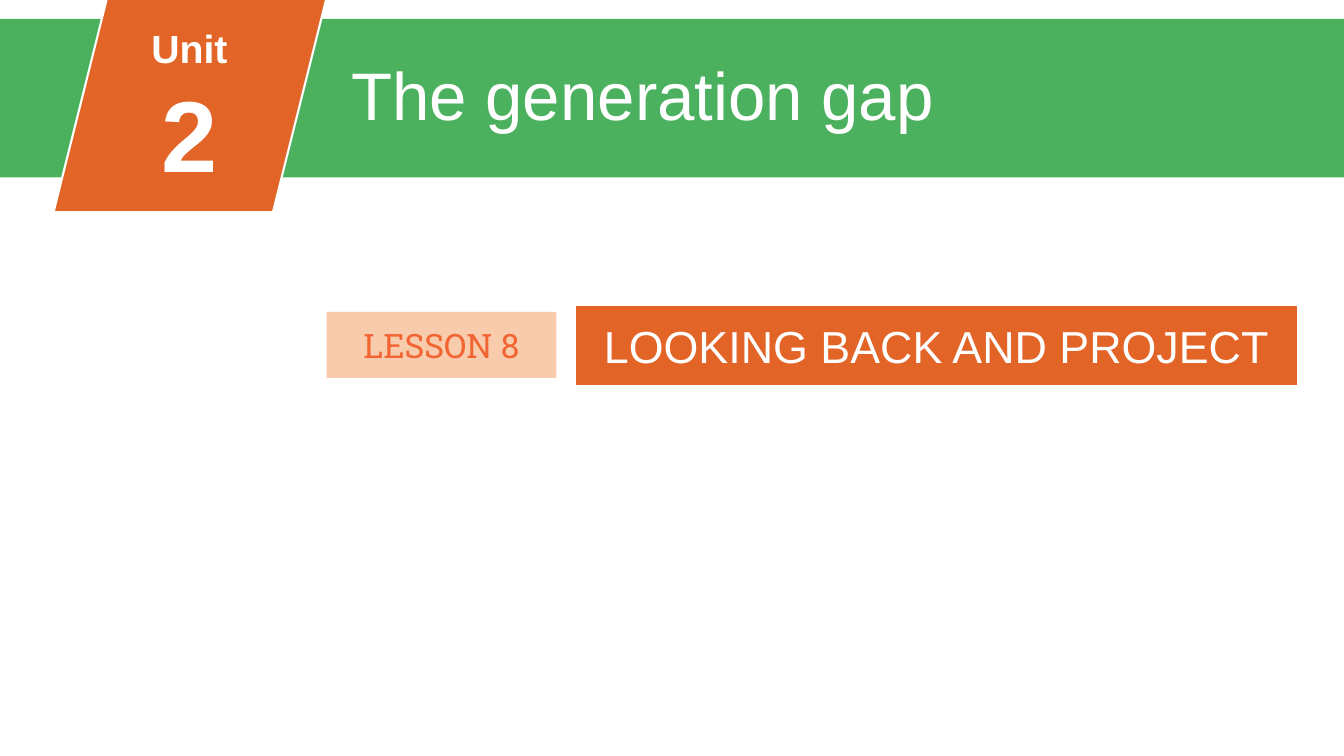
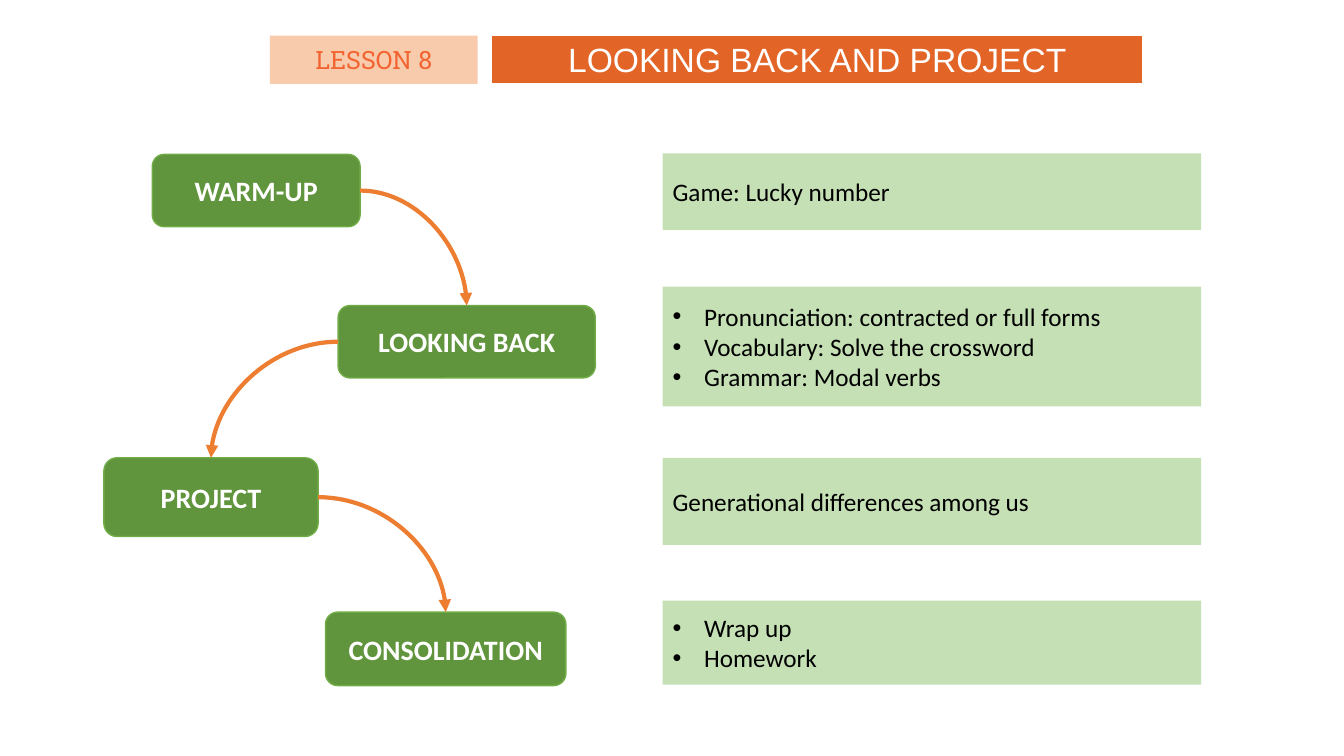
from dataclasses import dataclass
from typing import Optional

import lxml.etree
import pptx
import pptx.dml.color
import pptx.enum.shapes
import pptx.enum.text
import pptx.oxml.ns
import pptx.util

PX = 9525  # EMU in one px, 96 px to the inch

ORANGE, PEACH, CORAL = "E36427", "F8CBAD", "F26532"
BAND_GREEN, STEP_GREEN, STEP_EDGE, PALE_GREEN = "4CB15F", "61953D", "70AD47", "C5E0B4"
ARROW_ORANGE, WHITE, BLACK = "ED7D31", "FFFFFF", "000000"

LESSON = "LESSON 8"
LESSON_TITLE = "LOOKING BACK AND PROJECT"
DETAIL_LEFT, DETAIL_WIDTH = 631, 513
BULLET_INDENT = 30
TITLE_ONLY, COMPARISON = 5, 4

Shapes = pptx.enum.shapes.MSO_SHAPE
Align = pptx.enum.text.PP_ALIGN
Anchor = pptx.enum.text.MSO_ANCHOR
qn = pptx.oxml.ns.qn


@dataclass(frozen=True)
class Box:
    left: int
    top: int
    width: int
    height: int


@dataclass(frozen=True)
class TextStyle:
    font: str
    size: int
    color: str
    bold: bool = False
    align: Align = Align.CENTER
    anchor: Anchor = Anchor.MIDDLE
    bullets: bool = False


@dataclass(frozen=True)
class Step:
    name: str
    box: Box
    detail_top: int
    detail_height: int
    details: tuple[str, ...]


STEPS = (
    Step("WARM-UP", Box(145, 147, 198, 69), 146, 73, ("Game: Lucky number",)),
    Step("LOOKING BACK", Box(322, 291, 245, 69), 273, 114,
         ("Pronunciation: contracted or full forms",
          "Vocabulary: Solve the crossword",
          "Grammar: Modal verbs")),
    Step("PROJECT", Box(99, 436, 204, 75), 436, 83,
         ("Generational differences among us",)),
    Step("CONSOLIDATION", Box(310, 583, 229, 70), 572, 80,
         ("Wrap up", "Homework")),
)


def px(length: int) -> pptx.util.Emu:
    return pptx.util.Emu(length * PX)


def rgb(value: str) -> pptx.dml.color.RGBColor:
    return pptx.dml.color.RGBColor.from_string(value)


# Shared formatting
def place(shape, box: Box) -> None:
    shape.left, shape.top = px(box.left), px(box.top)
    shape.width, shape.height = px(box.width), px(box.height)


def paint(shape, fill: str, edge: Optional[str] = None, edge_width: float = 1.5) -> None:
    shape.shadow.inherit = False
    shape.fill.solid()
    shape.fill.fore_color.rgb = rgb(fill)
    if edge:
        shape.line.color.rgb = rgb(edge)
        shape.line.width = pptx.util.Pt(edge_width)
    else:
        shape.line.fill.background()


def add_bullet(para) -> None:
    properties = para._p.get_or_add_pPr()
    properties.set("marL", str(px(BULLET_INDENT)))
    properties.set("indent", str(px(-BULLET_INDENT)))
    lxml.etree.SubElement(properties, qn("a:buFont")).set("typeface", "Arial")
    lxml.etree.SubElement(properties, qn("a:buChar")).set("char", "•")


def write(shape, lines: tuple[str, ...], style: TextStyle) -> None:
    frame = shape.text_frame
    frame.text = "\n".join(lines)
    frame.word_wrap = True
    frame.auto_size = pptx.enum.text.MSO_AUTO_SIZE.NONE
    frame.vertical_anchor = style.anchor
    for para in frame.paragraphs:
        if style.bullets:
            add_bullet(para)
        para.alignment = style.align
        para.space_before = pptx.util.Pt(0)
        para.font.name = style.font
        para.font.size = pptx.util.Pt(style.size)
        para.font.bold = style.bold
        para.font.color.rgb = rgb(style.color)


def add_panel(page, kind: Shapes, box: Box, fill: str,
              edge: Optional[str] = None, edge_width: float = 1.5):
    panel = page.shapes.add_shape(
        kind, px(box.left), px(box.top), px(box.width), px(box.height))
    paint(panel, fill, edge, edge_width)
    return panel


def lesson_heading(page, heading, heading_box: Box, heading_size: int,
                   tag_box: Box, tag_size: int) -> None:
    place(heading, heading_box)
    paint(heading, ORANGE, WHITE)
    write(heading, (LESSON_TITLE,), TextStyle("Arial", heading_size, WHITE))
    tag = add_panel(page, Shapes.RECTANGLE, tag_box, PEACH)
    write(tag, (LESSON,), TextStyle("Roboto Slab", tag_size, CORAL))


def connect_steps(page, start, end, start_side: int) -> None:
    arrow = page.shapes.add_connector(
        pptx.enum.shapes.MSO_CONNECTOR.CURVE, 0, 0, 0, 0)
    arrow.begin_connect(start, start_side)
    arrow.end_connect(end, 0)
    arrow.line.color.rgb = rgb(ARROW_ORANGE)
    arrow.line.width = pptx.util.Pt(3)
    properties = arrow.element.spPr
    properties.find(qn("a:prstGeom")).set("prst", "curvedConnector2")
    outline = properties.find(qn("a:ln"))
    lxml.etree.SubElement(outline, qn("a:tailEnd")).set("type", "triangle")
    lxml.etree.SubElement(properties, qn("a:effectLst"))


# Slide 1: unit cover
def build_cover(deck) -> None:
    page = deck.slides.add_slide(deck.slide_layouts[TITLE_ONLY])
    heading_box = Box(548, 290, 688, 78)
    heading = add_panel(page, Shapes.RECTANGLE, heading_box, ORANGE)
    lesson_heading(page, heading, heading_box, 32, Box(311, 297, 219, 63), 24)

    add_panel(page, Shapes.RECTANGLE, Box(0, 18, 1280, 151), BAND_GREEN)
    add_panel(page, Shapes.PARALLELOGRAM, Box(51, -2, 260, 204), ORANGE, WHITE)

    title = page.shapes.title
    place(title, Box(325, 46, 853, 87))
    write(title, ("The generation gap",),
          TextStyle("Arial", 48, WHITE, align=Align.LEFT, anchor=Anchor.TOP))
    title.element.getparent().append(title.element)  # in front of the band

    unit = page.shapes.add_textbox(px(114), px(18), px(133), px(171))
    write(unit, ("Unit", "2"), TextStyle("Arial", 28, WHITE, bold=True))
    unit.text_frame.paragraphs[1].font.size = pptx.util.Pt(72)


# Slide 2: lesson outline
def build_outline(deck) -> None:
    page = deck.slides.add_slide(deck.slide_layouts[COMPARISON])
    lesson_heading(page, page.shapes.title, Box(468, 33, 621, 47), 24,
                   Box(257, 34, 198, 46), 18)

    step_shapes = []
    for number, step in enumerate(STEPS, start=1):
        shape = add_panel(page, Shapes.ROUNDED_RECTANGLE, step.box,
                          STEP_GREEN, STEP_EDGE, 1)
        write(shape, (step.name,), TextStyle("Calibri", 20, WHITE, bold=True))
        step_shapes.append(shape)

        detail = page.placeholders[number]
        place(detail, Box(DETAIL_LEFT, step.detail_top, DETAIL_WIDTH, step.detail_height))
        paint(detail, PALE_GREEN)
        write(detail, step.details,
              TextStyle("Calibri", 18, BLACK, align=Align.LEFT,
                        bullets=len(step.details) > 1))

    for start, end in zip(step_shapes, step_shapes[1:]):
        connect_steps(page, start, end, 3 if end.left > start.left else 1)


def main() -> None:
    deck = pptx.Presentation()
    deck.slide_width, deck.slide_height = px(1280), px(720)
    build_cover(deck)
    build_outline(deck)
    deck.save("out.pptx")


if __name__ == "__main__":
    main()
